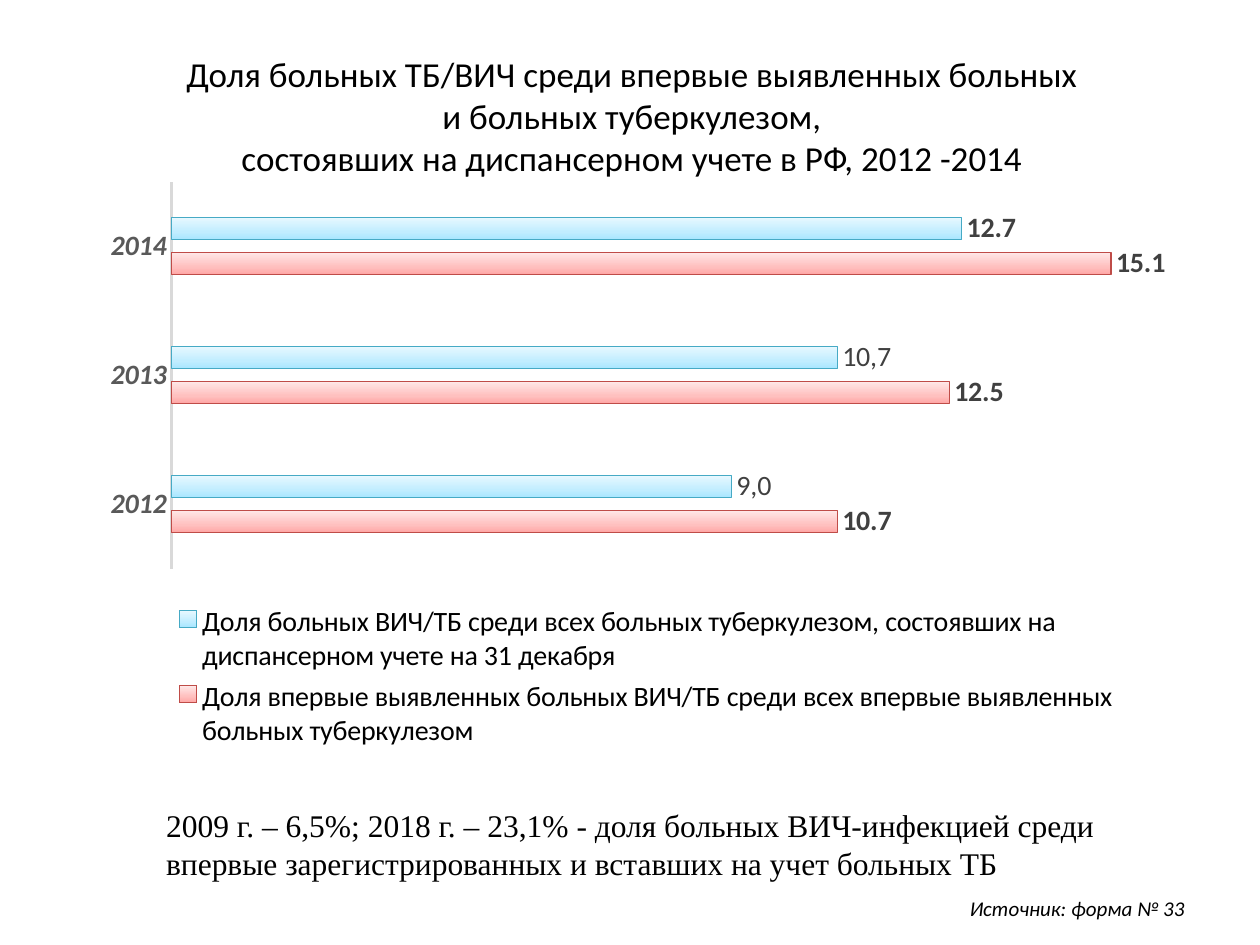
from lxml import etree
from pptx import Presentation
from pptx.chart.data import CategoryChartData
from pptx.dml.color import RGBColor
from pptx.enum.chart import (XL_CHART_TYPE, XL_LABEL_POSITION, XL_LEGEND_POSITION,
                             XL_TICK_LABEL_POSITION, XL_TICK_MARK)
from pptx.enum.text import MSO_ANCHOR, MSO_AUTO_SIZE, PP_ALIGN
from pptx.oxml import parse_xml
from pptx.oxml.ns import nsdecls, qn
from pptx.util import Cm, Pt

BAR = XL_CHART_TYPE.BAR_CLUSTERED
OUTSIDE_END = XL_LABEL_POSITION.OUTSIDE_END
BOTTOM = XL_LEGEND_POSITION.BOTTOM
NO_LABELS = XL_TICK_LABEL_POSITION.NONE
NO_TICKS = XL_TICK_MARK.NONE
MIDDLE = MSO_ANCHOR.MIDDLE
GROW = MSO_AUTO_SIZE.SHAPE_TO_FIT_TEXT
LEFT, CENTER = PP_ALIGN.LEFT, PP_ALIGN.CENTER

COLORS = {
    "text": "000000", "axis_text": "595959", "axis_line": "D9D9D9", "label": "404040",
    "new_line": "BF4C48", "all_line": "46AAC5",
}
GRADIENTS = {
    "new": {0: "FFA6A5", 35: "FFC0BF", 100: "FFE7E7"},
    "all": {0: "A7E6FF", 35: "C1EDFF", 100: "E7F8FF"},
}
YEARS = ["2012", "2013", "2014"]
SERIES = [
    ("new", "Доля впервые выявленных больных ВИЧ/ТБ среди всех впервые выявленных "
     "больных туберкулезом", [10.7, 12.5, 15.1], {}),
    ("all", "Доля больных ВИЧ/ТБ среди всех больных туберкулезом, состоявших на "
     "диспансерном учете на 31 декабря", [9, 10.7, 12.7], {0: "9,0", 1: "10,7"}),
]
TITLE = ["Доля больных ТБ/ВИЧ среди впервые выявленных больных\vи больных туберкулезом,\v"
         "состоявших на диспансерном учете в РФ, 2012 -2014"]
NOTE = ["2009 г. – 6,5%; 2018 г. – 23,1% - доля больных ВИЧ-инфекцией среди",
        "впервые зарегистрированных и вставших на учет больных ТБ"]
SOURCE = ["Источник: форма № 33"]


def set_font(font, size, color="text", name="Calibri", bold=False, italic=False):
    """Apply face, size, colour and style to a font."""
    font.name, font.size, font.bold, font.italic = name, Pt(size), bold, italic
    font.color.rgb = RGBColor.from_string(COLORS[color])


def add_text(page, place, lines, size, name="Calibri", italic=False, align=LEFT, wrap=True):
    """Add a text box with one paragraph per line and return its frame."""
    frame = page.shapes.add_textbox(*map(Cm, place)).text_frame
    frame.word_wrap = wrap
    for index, line in enumerate(lines):
        para = frame.add_paragraph() if index else frame.paragraphs[0]
        para.text, para.alignment = line, align
        set_font(para.font, size, name=name, italic=italic)
    return frame


def set_layout(element, x, y, w, h, inner=False):
    """Place a chart part by fractions of the chart area."""
    for old in element.findall(qn("c:layout")):
        element.remove(old)
    layout = parse_xml(f"<c:layout {nsdecls('c')}><c:manualLayout/></c:layout>")
    values = {"layoutTarget": "inner"} if inner else {}
    values.update(xMode="edge", yMode="edge", x=x, y=y, w=w, h=h)
    for tag, value in values.items():
        etree.SubElement(layout[0], qn(f"c:{tag}")).set("val", str(value))
    if inner:
        element.insert(0, layout)
    else:
        element.find(qn("c:legendPos")).addnext(layout)


def set_gradient(fill, series, stops):
    """Fill a series with an upward gradient of several stops."""
    fill.gradient()
    gradient = series.format.fill._xPr.find(qn("a:gradFill"))
    marks = "".join(f'<a:gs pos="{position * 1000}"><a:srgbClr val="{color}"/></a:gs>'
                    for position, color in stops.items())
    gradient.getparent().replace(gradient, parse_xml(
        f'<a:gradFill {nsdecls("a")} rotWithShape="1"><a:gsLst>{marks}</a:gsLst>'
        '<a:lin ang="16200000" scaled="1"/></a:gradFill>'))


def style_series(series, key, own_labels):
    """Colour the bars of a series and label them."""
    set_gradient(series.format.fill, series, GRADIENTS[key])
    series.format.line.color.rgb = RGBColor.from_string(COLORS[f"{key}_line"])
    series.format.line.width = Pt(0.75)
    labels = series.data_labels
    labels.show_value, labels.position = True, OUTSIDE_END
    set_font(labels.font, 16, "label", bold=True)
    for index, text in own_labels.items():
        label = series.points[index].data_label
        span = label.text_frame.paragraphs[0].add_run()
        span.text = text
        set_font(span.font, 16, "label")
        label.position = OUTSIDE_END


def style_axes(chart):
    """Show the years beside a plain line and hide the value axis."""
    years, values = chart.category_axis, chart.value_axis
    years.major_tick_mark = NO_TICKS
    set_font(years.tick_labels.font, 16, "axis_text", bold=True, italic=True)
    years.format.line.color.rgb = RGBColor.from_string(COLORS["axis_line"])
    years.format.line.width = Pt(1.5)
    values.minimum_scale, values.maximum_scale = 0, 16
    values.has_major_gridlines = False
    values.tick_label_position = NO_LABELS
    values.visible = False


def add_share_chart(page):
    """Add the bar chart of shares by year."""
    data = CategoryChartData()
    data.categories = YEARS
    for _, name, shares, _ in SERIES:
        data.add_series(name, shares)
    place = map(Cm, (0.89, 0.51, 23.34, 15.01))
    chart = page.shapes.add_chart(BAR, *place, data).chart
    set_font(chart.font, 10)
    chart.has_title = False
    plot = chart.plots[0]
    plot.gap_width, plot.overlap, plot.vary_by_categories = 326, -58, False
    for series, (key, _, _, own_labels) in zip(plot.series, SERIES):
        style_series(series, key, own_labels)
    style_axes(chart)
    chart.has_legend = True
    chart.legend.position, chart.legend.include_in_layout = BOTTOM, False
    set_font(chart.legend.font, 16)
    plot_area = chart._chartSpace.chart.plotArea
    set_layout(plot_area, 0.11, 0.21, 0.86, 0.52, inner=True)
    set_layout(chart.legend._element, 0.1, 0.77, 0.84, 0.21)


def main():
    """Build the slide and save it."""
    deck = Presentation()
    deck.slide_width, deck.slide_height = Cm(25.4), Cm(19.05)
    page = deck.slides.add_slide(deck.slide_layouts[6])
    add_share_chart(page)
    source = add_text(page, (19.3, 17.93, 6.5, 0.77), SOURCE, 12, italic=True)
    source.auto_size = GROW
    title = add_text(page, (0, 0.53, 25.48, 3.61), TITLE, 20, align=CENTER)
    title.vertical_anchor = MIDDLE
    note = add_text(page, (3.1, 16.13, 19.56, 1.8), NOTE, 18, "Times New Roman", wrap=False)
    note.auto_size = GROW
    deck.save("out.pptx")


if __name__ == "__main__":
    main()
